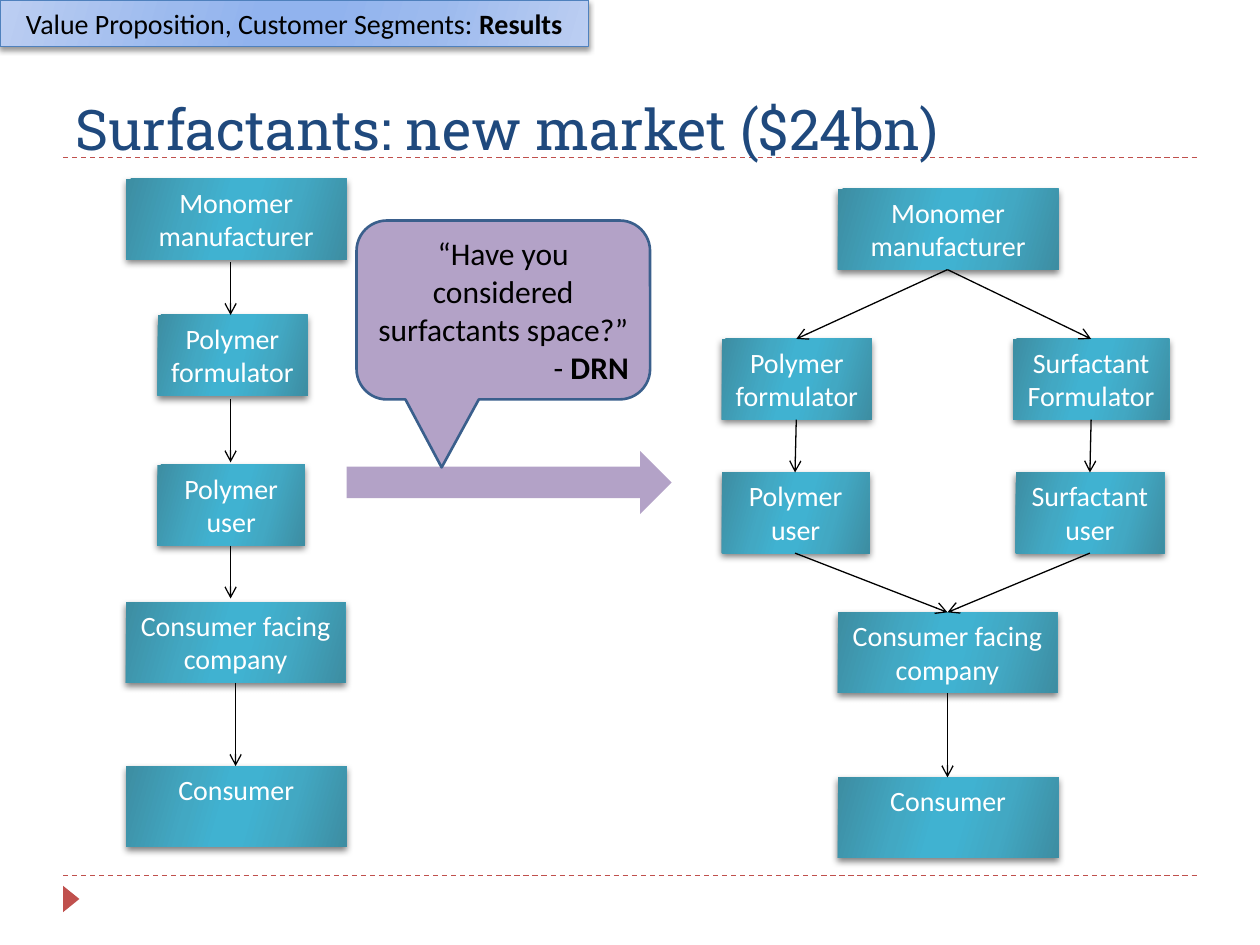
from dataclasses import dataclass

import pptx
import pptx.dml.color
import pptx.enum.dml
import pptx.enum.shapes
import pptx.enum.text
import pptx.oxml.ns
import pptx.util
from lxml import etree

PX = 9144  # EMU in one px, at 100 px to the inch
PT = pptx.util.Pt
KIND = pptx.enum.shapes.MSO_SHAPE
ALIGN = pptx.enum.text.PP_ALIGN
ANCHOR = pptx.enum.text.MSO_ANCHOR
DASH = pptx.enum.dml.MSO_LINE.DASH

BLACK, WHITE, RED, MAUVE = "000000", "FFFFFF", "C0504D", "B3A2C7"
STOPS = (0, 30, 45, 55, 73, 100)
TEAL = ("3D8DA2", "42A8C3", "40B2D1")
SKY = ("BCCEF2", "9CBAEE", "91B3EE")
TALL = 64


@dataclass
class Box:
    x: int
    y: int
    w: int
    lines: tuple[str, ...]

    def head(self) -> tuple[int, int]:
        return self.x + self.w // 2, self.y

    def foot(self) -> tuple[int, int]:
        return self.x + self.w // 2, self.y + TALL


@dataclass
class Run:
    text: str
    bold: bool = False


def paint(text: str) -> pptx.dml.color.RGBColor:
    return pptx.dml.color.RGBColor.from_string(text)


def node(root, tag: str, **attrs):
    return etree.SubElement(root, pptx.oxml.ns.qn(tag), attrs)


def apply(item, form: dict) -> None:
    for key, value in form.items():
        setattr(item, key, value)


def stroke(line, tint: str, width: float) -> None:
    line.color.rgb = paint(tint)
    line.width = PT(width)


def shape(slide, kind, x: int, y: int, w: int, h: int, fill: str = WHITE):
    """Add a flat shape with a plain fill and no outline."""
    item = slide.shapes.add_shape(kind, x * PX, y * PX, w * PX, h * PX)
    item.shadow.inherit = False
    item.fill.solid()
    item.fill.fore_color.rgb = paint(fill)
    item.line.fill.background()
    return item


def shade(item, tints: tuple[str, str, str]) -> None:
    """Fill with a gradient that mirrors the tints about its middle."""
    item.fill.gradient()
    item.fill.gradient_angle = 344
    stops = item._element.spPr.find(".//" + pptx.oxml.ns.qn("a:gsLst"))
    for old in list(stops):
        stops.remove(old)
    for place, tint in zip(STOPS, tints + tints[::-1]):
        stop = node(stops, "a:gs", pos=str(place * 1000))
        node(stop, "a:srgbClr", val=tint)


def shadow(item, alpha: int, blur: int, dist: int) -> None:
    root = item._element.spPr.find(pptx.oxml.ns.qn("a:effectLst"))
    cast = node(root, "a:outerShdw", blurRad=str(PT(blur)),
                dist=str(PT(dist)), dir="5400000", rotWithShape="0")
    tint = node(cast, "a:srgbClr", val=BLACK)
    node(tint, "a:alpha", val=str(alpha * 1000))


def write(item, rows: list[list[Run]], size: int, tint: str, frame: dict,
          aligns: list, font: str = "Calibri") -> None:
    apply(item.text_frame, frame)
    for i, (row, align) in enumerate(zip(rows, aligns)):
        para = (item.text_frame.add_paragraph() if i
                else item.text_frame.paragraphs[0])
        para.alignment = align
        for part in row:
            run = para.add_run()
            run.text = part.text
            apply(run.font, {"name": font, "size": PT(size), "bold": part.bold})
            run.font.color.rgb = paint(tint)


def link(slide, start: tuple[int, int], end: tuple[int, int],
         tint: str = BLACK):
    line = slide.shapes.add_connector(
        pptx.enum.shapes.MSO_CONNECTOR.STRAIGHT,
        *(value * PX for value in start + end))
    stroke(line.line, tint, 0.75)
    node(line._element.spPr, "a:effectLst")
    return line


def arrow(slide, start: tuple[int, int], end: tuple[int, int]) -> None:
    line = link(slide, start, end)
    node(line.line._get_or_add_ln(), "a:tailEnd", type="arrow")


def stage(slide, box: Box) -> None:
    item = shape(slide, KIND.RECTANGLE, box.x, box.y, box.w, TALL)
    shade(item, TEAL)
    shadow(item, 50, 4, 2)
    write(item, [[Run(text)] for text in box.lines], 16, WHITE,
          {"word_wrap": False, "vertical_anchor": ANCHOR.TOP},
          [ALIGN.CENTER] * len(box.lines))


def frame(slide) -> None:
    """Draw the rules, corner mark, title and section banner."""
    for y in (695, 125):
        link(slide, (50, y), (950, y), RED).line.dash_style = DASH
    mark = shape(slide, KIND.ISOSCELES_TRIANGLE, 46, 707, 21, 13, RED)
    mark.rotation = 90

    title = slide.shapes.add_textbox(50 * PX, 25 * PX, 900 * PX, 108 * PX)
    write(title, [[Run("Surfactants: new market ($24bn)")]], 32, "1F497D",
          {"word_wrap": True, "vertical_anchor": ANCHOR.BOTTOM},
          [ALIGN.LEFT], "Roboto Slab")

    banner = shape(slide, KIND.RECTANGLE, 0, 0, 467, 37)
    shade(banner, SKY)
    stroke(banner.line, "4F81BD", 0.75)
    shadow(banner, 40, 3, 2)
    write(banner, [[Run("Value Proposition, Customer Segments:"),
                    Run(" Results", True)]], 16, BLACK,
          {"word_wrap": True, "vertical_anchor": ANCHOR.TOP}, [ALIGN.CENTER])


def before(slide) -> None:
    """Draw the single chain on the left."""
    firm = Box(100, 478, 174, ("Consumer facing", "company"))
    buyer = Box(100, 608, 175, ("Consumer",))
    for box in (Box(100, 142, 175, ("Monomer", "manufacturer")),
                Box(125, 250, 119, ("Polymer", "formulator")),
                Box(125, 369, 117, ("Polymer", "user")), firm, buyer):
        stage(slide, box)
    for top, end in ((208, 250), (317, 367), (433, 475)):
        arrow(slide, (183, top), (183, end))
    arrow(slide, firm.foot(), buyer.head())


def after(slide) -> None:
    """Draw the chain on the right, which splits and joins again."""
    maker = Box(665, 150, 175, ("Monomer", "manufacturer"))
    firm = Box(665, 486, 174, ("Consumer facing", "company"))
    buyer = Box(665, 617, 175, ("Consumer",))
    lanes = ((Box(573, 269, 119, ("Polymer", "formulator")),
              Box(573, 375, 117, ("Polymer", "user"))),
             (Box(804, 269, 124, ("Surfactant", "Formulator")),
              Box(806, 375, 118, ("Surfactant", "user"))))
    for box in (maker, *lanes[0], *lanes[1], firm, buyer):
        stage(slide, box)
    for lane in lanes:
        chain = (maker, *lane, firm)
        for above, below in zip(chain, chain[1:]):
            arrow(slide, above.foot(), below.head())
    arrow(slide, firm.foot(), buyer.head())


def quote(slide) -> None:
    shape(slide, KIND.RIGHT_ARROW, 275, 358, 258, 50, MAUVE)
    bubble = shape(slide, KIND.ROUNDED_RECTANGULAR_CALLOUT,
                   283, 175, 233, 142, MAUVE)
    for i, value in enumerate((-0.21, 0.88, 0.17)):
        bubble.adjustments[i] = value
    stroke(bubble.line, "3A5F8C", 1.5)
    write(bubble, [[Run("“Have you considered surfactants space?”")],
                   [Run("- "), Run("DRN", True)]], 18, BLACK,
          {"word_wrap": True, "vertical_anchor": ANCHOR.MIDDLE},
          [ALIGN.CENTER, ALIGN.RIGHT])


def main() -> None:
    deck = pptx.Presentation()
    apply(deck, {"slide_width": 1000 * PX, "slide_height": 750 * PX})
    slide = deck.slides.add_slide(deck.slide_layouts[6])
    for part in (frame, after, before, quote):
        part(slide)
    deck.save("out.pptx")


if __name__ == "__main__":
    main()
